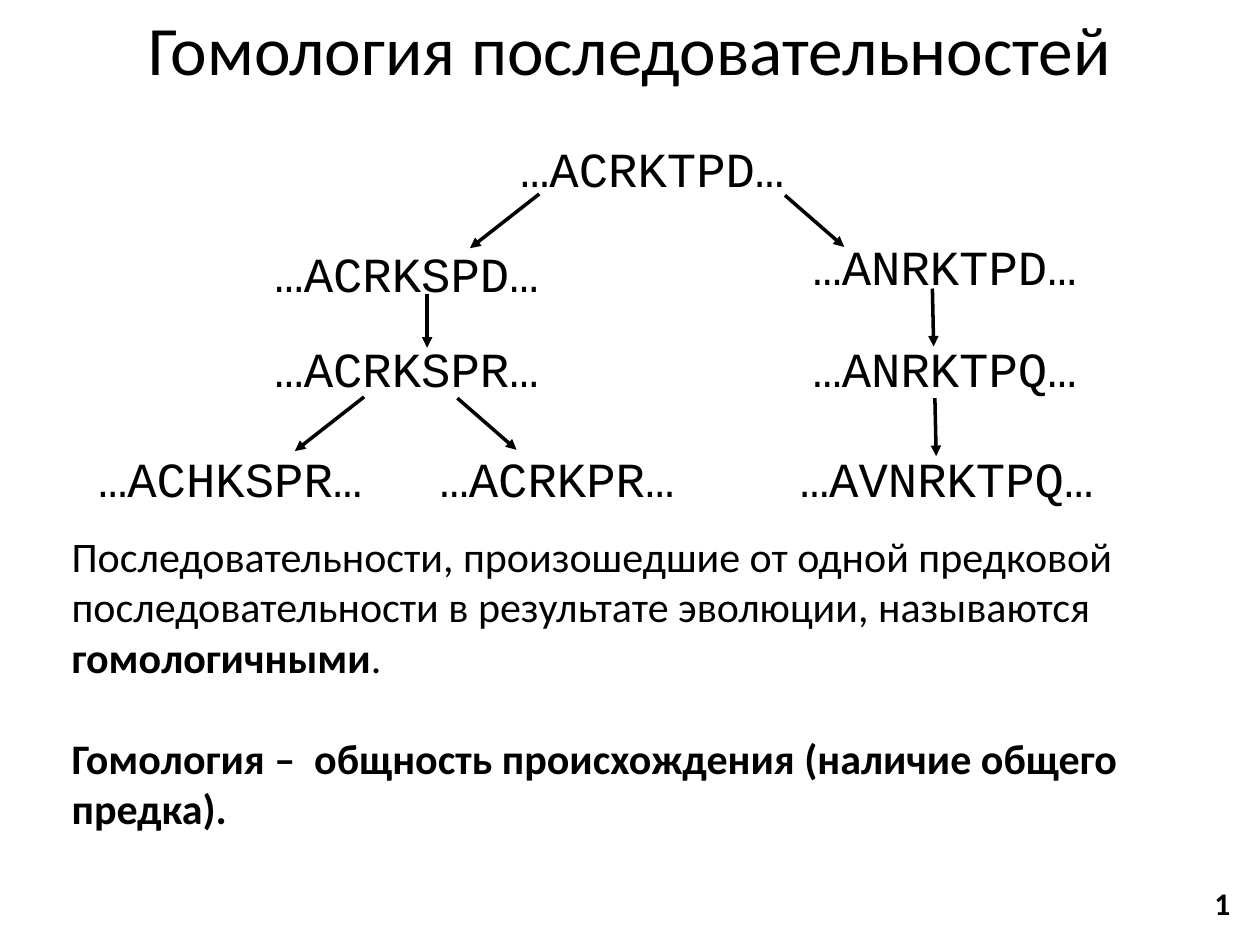
from lxml.etree import SubElement
from pptx import Presentation
from pptx.dml.color import RGBColor
from pptx.enum.shapes import MSO_CONNECTOR as Connector
from pptx.enum.text import MSO_ANCHOR as Anchor, MSO_AUTO_SIZE as AutoSize, PP_ALIGN as Align
from pptx.oxml.ns import qn
from pptx.util import Inches, Pt

COLORS = {"ink": "000000", "paper": "FFFFFF"}
BODY_FONT, SEQUENCE_FONT = "Calibri", "Courier New"


class SlideBuilder:
    def __init__(self, deck):
        self.page = deck.slides.add_slide(deck.slide_layouts[6])
        fill = self.page.background.fill
        fill.solid()
        fill.fore_color.rgb = RGBColor.from_string(COLORS["paper"])
        self.ink = RGBColor.from_string(COLORS["ink"])

    def text(self, place, paragraphs, size, font=BODY_FONT, wrap=True,
             align=Align.LEFT, anchor=Anchor.TOP, gap=0):
        """Each paragraph is a list of (text, bold) spans; gap separates paragraphs."""
        box = self.page.shapes.add_textbox(*map(Inches, place))
        frame = box.text_frame
        frame.word_wrap = wrap
        frame.auto_size = AutoSize.NONE
        frame.vertical_anchor = anchor
        for index, spans in enumerate(paragraphs):
            para = frame.add_paragraph() if index else frame.paragraphs[0]
            para.alignment = align
            para.space_before = Pt(gap if index else 0)
            para.font.name, para.font.size = font, Pt(size)
            para.font.color.rgb = self.ink
            for words, bold in spans:
                span = para.add_run()
                span.text = words
                span.font.bold = bold

    def sequence(self, left, top, letters):
        words = f"…{letters}…"
        width = round(0.22 + len(words) * 0.6 * 28 / 72, 2)
        self.text((left, top, width, 0.57), [[(words, False)]], 28, SEQUENCE_FONT, wrap=False)

    def arrow(self, start, end):
        line = self.page.shapes.add_connector(Connector.STRAIGHT, *map(Inches, start + end))
        line.line.width = Pt(2)
        line.line.color.rgb = self.ink
        SubElement(line.line._get_or_add_ln(), qn("a:tailEnd"), type="triangle")
        SubElement(line._element.spPr, qn("a:effectLst"))


def main():
    deck = Presentation()
    deck.slide_width, deck.slide_height = Inches(10), Inches(7.5)
    slide = SlideBuilder(deck)

    # Title
    slide.text((0, 0, 10, 0.75), [[("Гомология последовательностей", False)]], 39.6,
               align=Align.CENTER, anchor=Anchor.MIDDLE)

    # Family tree of sequences
    for left, top, letters in [
        (4.03, 1.05, "ACRKTPD"),
        (2.08, 1.88, "ACRKSPD"),
        (2.08, 2.64, "ACRKSPR"),
        (0.68, 3.51, "ACHKSPR"),
        (3.39, 3.51, "ACRKPR"),
        (6.35, 1.83, "ANRKTPD"),
        (6.35, 2.64, "ANRKTPQ"),
        (6.25, 3.51, "AVNRKTPQ"),
    ]:
        slide.sequence(left, top, letters)

    # Descent arrows
    for start, end in [
        ((4.28, 1.54), (3.73, 1.97)),
        ((3.39, 2.33), (3.39, 2.76)),
        ((2.89, 3.15), (2.34, 3.58)),
        ((3.63, 3.16), (4.10, 3.57)),
        ((6.23, 1.55), (6.70, 1.96)),
        ((7.40, 2.29), (7.41, 2.75)),
        ((7.42, 3.16), (7.43, 3.62)),
    ]:
        slide.arrow(start, end)

    # Definitions
    slide.text((0.47, 4.16, 9.09, 2.52), [
        [("Последовательности, произошедшие от одной предковой последовательности "
          "в результате эволюции, называются ", False),
         ("гомологичными", True), (".", False)],
        [("Гомология –  общность происхождения (наличие общего предка).", True)],
    ], 24, gap=29)

    # Page number
    slide.text((9.54, 6.97, 0.33, 0.4), [[("1", True)]], 18, wrap=False)

    deck.save("out.pptx")


if __name__ == "__main__":
    main()
